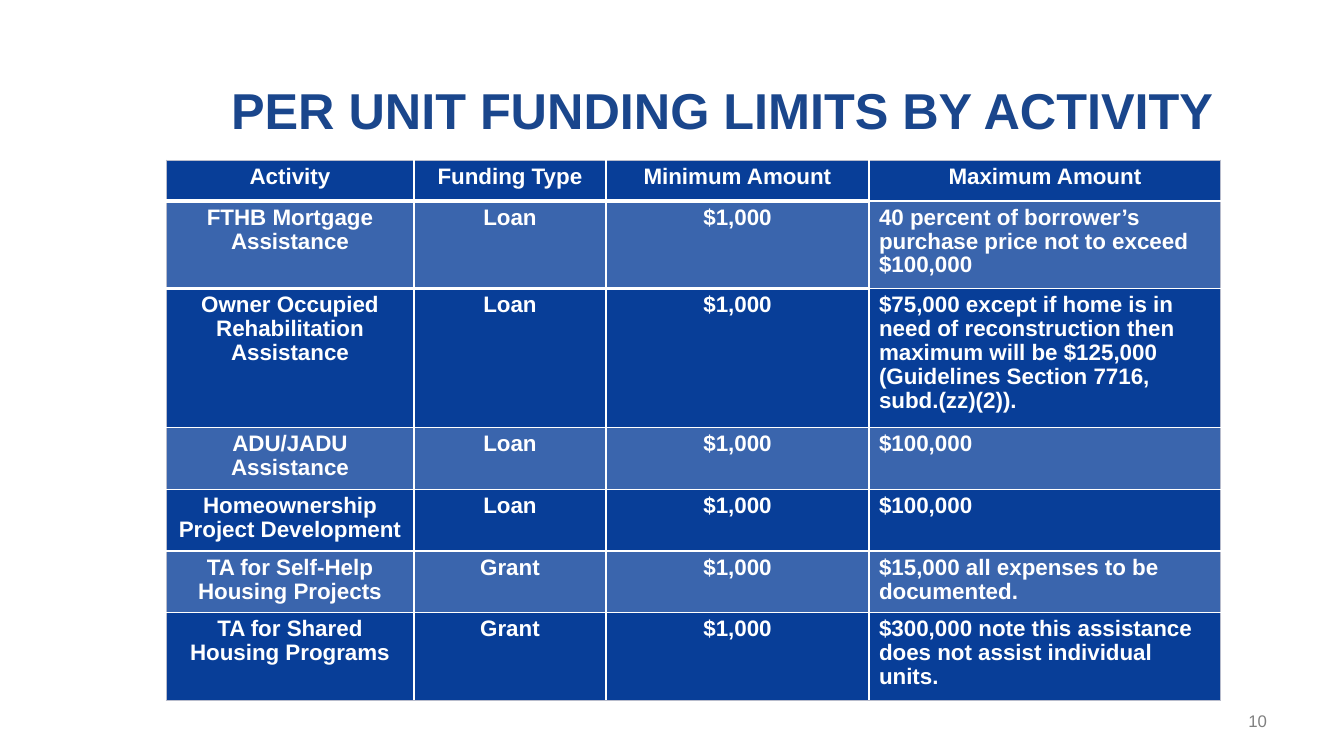
import pptx
import pptx.dml.color
import pptx.enum.text
import pptx.oxml
import pptx.oxml.ns
import pptx.util

PX = 914400 / 100.8
ALIGN = pptx.enum.text.PP_ALIGN
WHITE, EDGE, NAVY, BAND = "FFFFFF", "B8BCCC", "083E98", "3A65AD"
COLUMN_WIDTHS = [248, 192, 263, 352]
ROW_HEIGHTS = [41, 85, 134, 60, 60, 60, 84]
LIMITS = [
    ["Activity", "Funding Type", "Minimum Amount", "Maximum Amount"],
    ["FTHB Mortgage Assistance", "Loan", "$1,000",
     "40 percent of borrower’s purchase price not to exceed $100,000"],
    ["Owner Occupied Rehabilitation Assistance", "Loan", "$1,000",
     "$75,000 except if home is in need of reconstruction then maximum will be "
     "$125,000 (Guidelines Section 7716, subd.(zz)(2))."],
    ["ADU/JADU Assistance", "Loan", "$1,000", "$100,000"],
    ["Homeownership Project Development", "Loan", "$1,000", "$100,000"],
    ["TA for Self-Help Housing Projects", "Grant", "$1,000",
     "$15,000 all expenses to be documented."],
    ["TA for Shared Housing Programs", "Grant", "$1,000",
     "$300,000 note this assistance does not assist individual units."],
]


def px(length):
    return pptx.util.Emu(round(length * PX))


def color(value):
    return pptx.dml.color.RGBColor.from_string(value)


def write(frame, text, align, size, ink, bold):
    para = frame.paragraphs[0]
    para.alignment = align
    span = para.add_run()
    span.text = text
    look = {"name": "Arial", "size": pptx.util.Pt(size), "bold": bold}
    for name, value in look.items():
        setattr(span.font, name, value)
    span.font.color.rgb = color(ink)
    return para


def add_text(page, box, text, align, size, ink, bold=False):
    frame = page.shapes.add_textbox(*map(px, box)).text_frame
    layout = {"word_wrap": True, "vertical_anchor": pptx.enum.text.MSO_ANCHOR.MIDDLE,
              "margin_left": px(0) if bold else px(10),
              "margin_right": px(0) if bold else px(10),
              "margin_top": 0, "margin_bottom": 0}
    for name, value in layout.items():
        setattr(frame, name, value)
    write(frame, text, align, size, ink, bold)


def set_borders(cell, borders):
    """Draw the given sides; borders precede the fill in the cell properties."""
    properties = cell._tc.get_or_add_tcPr()
    for index, side in enumerate(side for side in "LRTB" if side in borders):
        ink, points = borders[side]
        properties.insert(index, pptx.oxml.parse_xml(
            f'<a:ln{side} {pptx.oxml.ns.nsdecls("a")} w="{pptx.util.Pt(points)}">'
            f'<a:solidFill><a:srgbClr val="{ink}"/></a:solidFill></a:ln{side}>'))


def add_limits_table(page, box):
    rows, columns = len(LIMITS), len(COLUMN_WIDTHS)
    table = page.shapes.add_table(rows, columns, *map(px, box)).table
    table.first_row = table.horz_banding = False
    for column, width in zip(table.columns, COLUMN_WIDTHS):
        column.width = px(width)
    for row, height in zip(table.rows, ROW_HEIGHTS):
        row.height = px(height)

    for r, values in enumerate(LIMITS):
        for c, value in enumerate(values):
            cell = table.cell(r, c)
            cell.fill.solid()
            cell.fill.fore_color.rgb = color(BAND if r % 2 else NAVY)
            left_aligned = r > 0 and c == columns - 1
            para = write(cell.text_frame, value,
                         ALIGN.LEFT if left_aligned else ALIGN.CENTER, 16, WHITE, True)
            para.line_spacing = 0.96

            # Thin outer edge, and a thick rule under the first three headings
            outer = {"L": c == 0, "R": c == columns - 1, "T": r == 0, "B": r == rows - 1}
            borders = {side: (EDGE, 0.75) for side, shown in outer.items() if shown}
            if c < columns - 1 and r < 2:
                borders["T" if r else "B"] = (WHITE, 3)
            set_borders(cell, borders)


def build_limits_page(deck):
    page = deck.slides.add_slide(deck.slide_layouts[6])
    add_text(page, (224, 50, 997, 118), "PER UNIT FUNDING LIMITS BY ACTIVITY",
             ALIGN.CENTER, 36, "1A468C", bold=True)
    add_limits_table(page, (166, 160, sum(COLUMN_WIDTHS), sum(ROW_HEIGHTS)))
    add_text(page, (964, 701, 313, 40), "10", ALIGN.RIGHT, 12, "808080")


def main():
    deck = pptx.Presentation()
    deck.slide_width, deck.slide_height = px(1344), px(756)
    build_limits_page(deck)
    deck.save("out.pptx")


if __name__ == "__main__":
    main()
